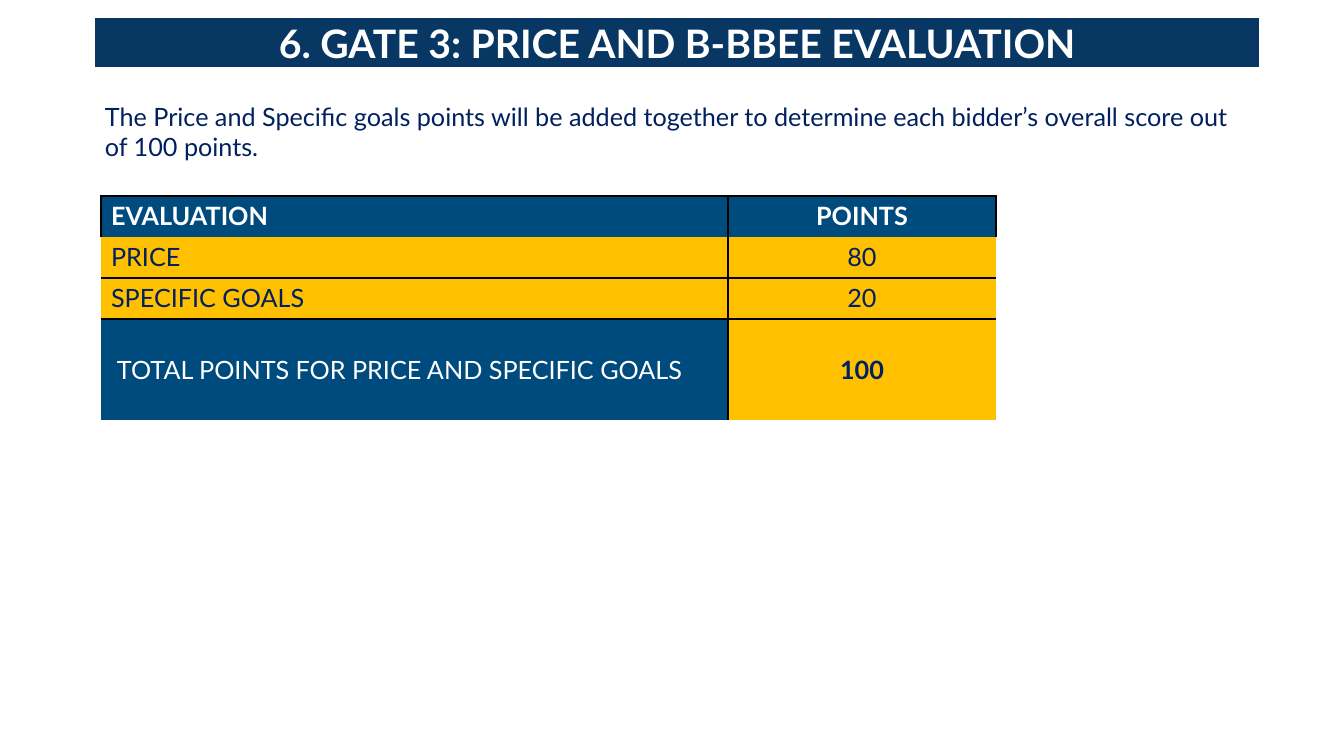
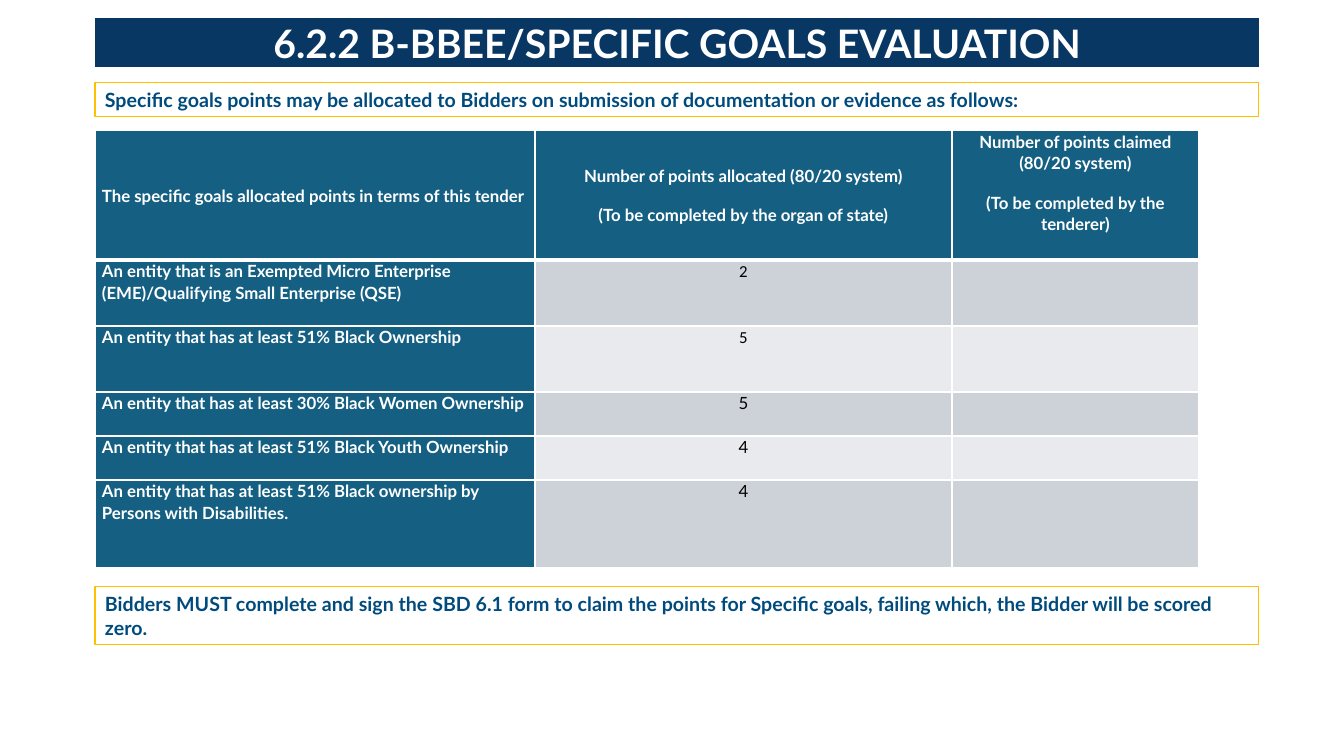
import dataclasses

import pptx
import pptx.dml.color
import pptx.enum.text
import pptx.oxml
import pptx.oxml.ns
import pptx.util

ALIGN = pptx.enum.text.PP_ALIGN
ANCHOR = pptx.enum.text.MSO_ANCHOR


@dataclasses.dataclass(frozen=True)
class Theme:
    font: str = "Lato"
    digit: str = "Calibri"
    band: str = "083763"
    blue: str = "004B7E"
    navy: str = "002060"
    teal: str = "156082"
    gold: str = "FFC000"
    dark: str = "CCD2D8"
    light: str = "E8EAED"
    white: str = "FFFFFF"
    black: str = "000000"
    head: int = 28
    body: int = 18
    note: int = 14
    small: int = 12


THEME = Theme()
LEFT, WIDTH = 95, 1164


def px(count):
    return pptx.util.Emu(round(count * 914400 / 100.8))


def rgb(code):
    return pptx.dml.color.RGBColor.from_string(code)


def paint(item, code):
    item.fill.solid()
    item.fill.fore_color.rgb = rgb(code)


def place(shape, left, top, width, height):
    shape.left, shape.top = px(left), px(top)
    shape.width, shape.height = px(width), px(height)


def write(frame, text, size=THEME.body, color=THEME.navy, bold=False,
          font=THEME.font, align=ALIGN.LEFT, lead=None, gap=0):
    """Fill a frame, one paragraph for each line of text."""
    for index, line in enumerate(text.split("\n")):
        para = frame.add_paragraph() if index else frame.paragraphs[0]
        para.alignment = align
        if lead:
            para.line_spacing = lead
        if index:
            para.space_before = pptx.util.Pt(gap)
        run = para.add_run()
        run.text = line
        run.font.name = font
        run.font.size = pptx.util.Pt(size)
        run.font.bold = bold
        run.font.color.rgb = rgb(color)


def add_page(deck, text):
    """Add a slide whose title sits in the rounded band."""
    slide = deck.slides.add_slide(deck.slide_layouts[5])
    title = slide.shapes.title
    place(title, LEFT, 18, WIDTH, 49)
    title.element.spPr.append(pptx.oxml.parse_xml(
        f'<a:prstGeom {pptx.oxml.ns.nsdecls("a")} prst="roundRect">'
        '<a:avLst/></a:prstGeom>'))
    paint(title, THEME.band)
    frame = title.text_frame
    frame.auto_size = pptx.enum.text.MSO_AUTO_SIZE.NONE
    frame.vertical_anchor = ANCHOR.MIDDLE
    frame.margin_top = frame.margin_bottom = 0
    write(frame, text, THEME.head, THEME.white, True, align=ALIGN.CENTER)
    return slide


def add_box(slide, top, height, text, edge, **style):
    box = slide.shapes.add_textbox(px(LEFT), px(top), px(WIDTH), px(height))
    paint(box, THEME.white)
    box.line.color.rgb = rgb(edge)
    box.line.width = pptx.util.Pt(0.75)
    box.text_frame.word_wrap = True
    write(box.text_frame, text, **style)


def add_grid(slide, left, top, cols, rows):
    table = slide.shapes.add_table(
        len(rows), len(cols), px(left), px(top),
        px(sum(cols)), px(sum(rows))).table
    for col, width in zip(table.columns, cols):
        col.width = px(width)
    for row, height in zip(table.rows, rows):
        row.height = px(height)
    return table


def rule(cell, code, **widths):
    """Set cell borders in points; a side left out gets no line."""
    props = cell._tc.get_or_add_tcPr()
    for index, side in enumerate("LRTB"):
        width = widths.get(side, 0)
        fill = (f'<a:solidFill><a:srgbClr val="{code}"/></a:solidFill>'
                if width else '<a:noFill/>')
        props.insert(index, pptx.oxml.parse_xml(
            f'<a:ln{side} {pptx.oxml.ns.nsdecls("a")} '
            f'w="{pptx.util.Pt(width)}">{fill}</a:ln{side}>'))


def add_score(slide):
    data = [("EVALUATION", "POINTS"), ("PRICE", "80"),
            ("SPECIFIC GOALS", "20"),
            ("TOTAL POINTS FOR PRICE AND SPECIFIC GOALS", "100")]
    table = add_grid(slide, 101, 196, [627, 268], [41, 41, 41, 101])
    last = len(data) - 1
    for y, texts in enumerate(data):
        for x, text in enumerate(texts):
            cell = table.cell(y, x)
            blue = y == 0 or (y == last and x == 0)
            paint(cell, THEME.blue if blue else THEME.gold)
            write(cell.text_frame, text,
                  color=THEME.white if blue else THEME.navy,
                  bold=y == 0 or (y == last and x == 1),
                  align=ALIGN.CENTER if x else ALIGN.LEFT)
            rule(cell, THEME.black, L=int(x == 1 or y == 0),
                 R=int(x == 0 or y == 0), T=int(y != 1),
                 B=int(0 < y < last))
            if y == last:
                cell.vertical_anchor = ANCHOR.MIDDLE
    table.cell(last, 0).margin_left = px(16)


def add_goals(slide):
    heads = ["The specific goals allocated points in terms of this tender",
             "Number of points allocated (80/20 system)\n"
             "(To be completed by the organ of state)",
             "Number of points claimed (80/20 system)\n"
             "(To be completed by the tenderer)"]
    goals = [
        ("An entity that is an Exempted Micro Enterprise "
         "(EME)/Qualifying Small Enterprise (QSE)", "2", THEME.digit),
        ("An entity that has at least 51% Black Ownership", "5", THEME.digit),
        ("An entity that has at least 30% Black Women Ownership", "5",
         THEME.font),
        ("An entity that has at least 51% Black Youth Ownership", "4",
         THEME.font),
        ("An entity that has at least 51% Black ownership by Persons "
         "with Disabilities.", "4", THEME.font)]
    table = add_grid(slide, LEFT, 130, [440, 417, 247],
                     [130, 66, 66, 44, 44, 88])
    data = [heads] + [(goal, points, "") for goal, points, _ in goals]
    for y, texts in enumerate(data):
        for x, text in enumerate(texts):
            cell = table.cell(y, x)
            teal = y == 0 or x == 0
            stripe = THEME.dark if y % 2 else THEME.light
            paint(cell, THEME.teal if teal else stripe)
            cell.margin_left = cell.margin_right = px(7)
            cell.margin_top = cell.margin_bottom = 0
            if y == 0 and x < 2:
                cell.vertical_anchor = ANCHOR.MIDDLE
            if text:
                write(cell.text_frame, text, THEME.small,
                      THEME.white if teal else THEME.black, teal,
                      THEME.font if teal else goals[y - 1][2],
                      ALIGN.CENTER if x else ALIGN.LEFT,
                      lead=1.07, gap=12.8)
            rule(cell, THEME.white, L=1, R=1, T=3 if y == 1 else 1,
                 B=1 if y else 3)


def main():
    deck = pptx.Presentation()
    deck.slide_width, deck.slide_height = px(1344), px(756)

    slide = add_page(deck, "6. GATE 3: PRICE AND B-BBEE EVALUATION")
    add_score(slide)
    add_box(slide, 96, 71,
            "The Price and Specific goals points will be added together to "
            "determine each bidder’s overall score out of 100 points.",
            THEME.white)

    slide = add_page(deck, "6.2.2 B-BBEE/SPECIFIC GOALS EVALUATION")
    note = dict(edge=THEME.gold, size=THEME.note, color=THEME.blue, bold=True)
    add_box(slide, 83, 34,
            "Specific goals points may be allocated to Bidders on submission "
            "of documentation or evidence as follows:", **note)
    add_box(slide, 587, 58,
            "Bidders MUST complete and sign the SBD 6.1 form to claim the "
            "points for Specific goals, failing which, the Bidder will be "
            "scored zero.", **note)
    add_goals(slide)
    deck.save("out.pptx")


if __name__ == "__main__":
    main()
